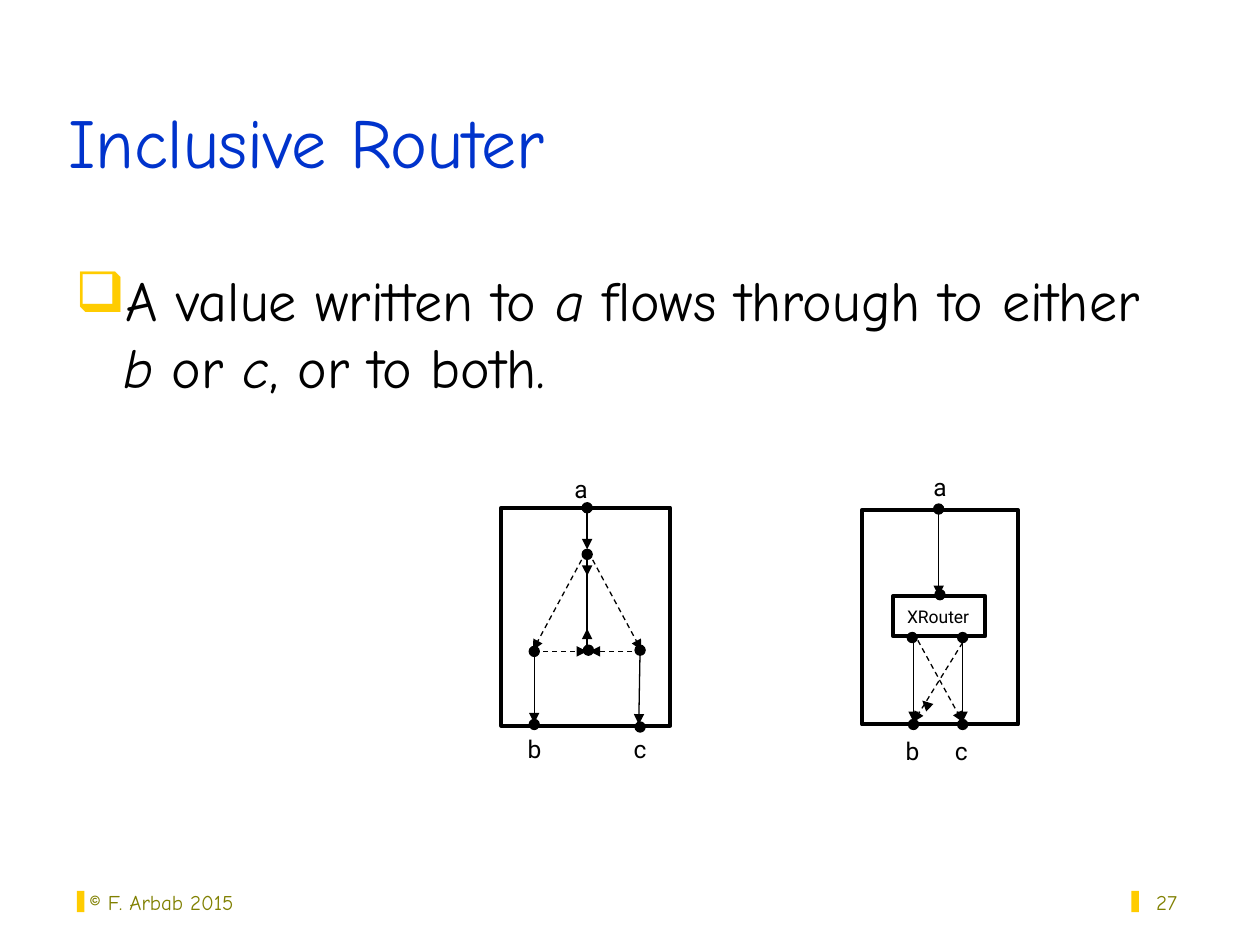
"""Builds the Inclusive Router slide on a grid of 100 columns by 75 rows."""
from lxml.etree import SubElement
from pptx import Presentation
from pptx.dml.color import RGBColor
from pptx.enum.dml import MSO_LINE
from pptx.enum.shapes import MSO_CONNECTOR, MSO_SHAPE
from pptx.enum.text import MSO_ANCHOR as Anchor, MSO_AUTO_SIZE as AutoSize, PP_ALIGN as Align
from pptx.oxml.ns import qn
from pptx.util import Inches, Pt

BLACK = RGBColor(0x00, 0x00, 0x00)
BLUE = RGBColor(0x00, 0x33, 0xCC)
GOLD = RGBColor(0xFF, 0xCC, 0x00)
OLIVE = RGBColor(0x80, 0x80, 0x00)
COLUMNS, ROWS = 100, 75
DOT = 0.8


class SlideBuilder:
    """Holds the style, the slide and the shape collection being drawn on."""

    body_font, label_font = "Comic Neue", "Roboto"

    def __init__(self, deck):
        self.deck = deck
        self.page = deck.slides.add_slide(deck.slide_layouts[5])
        self.shapes = self.page.shapes

    def place(self, column, row):
        return (round(self.deck.slide_width * column / COLUMNS),
                round(self.deck.slide_height * row / ROWS))

    def area(self, left, top, width, height):
        return self.place(left, top) + self.place(width, height)

    def start_group(self):
        self.shapes = self.page.shapes.add_group_shape().shapes

    def style(self, font, **values):
        font.color.rgb = values.pop("color")
        for key, value in values.items():
            setattr(font, key, value)

    def title(self, text, area):
        box = self.page.shapes.title
        for key, value in zip(("left", "top", "width", "height"), self.area(*area)):
            setattr(box, key, value)
        frame = box.text_frame
        frame.text = text
        frame.vertical_anchor, frame.auto_size = Anchor.BOTTOM, AutoSize.NONE
        para = frame.paragraphs[0]
        para.alignment = Align.LEFT
        self.style(para.runs[0].font, name=self.body_font, size=Pt(40), color=BLUE)

    def bullet(self, parts, area):
        frame = self.shapes.add_textbox(*self.area(*area)).text_frame
        frame.word_wrap = True
        para = frame.paragraphs[0]
        settings = para._p.get_or_add_pPr()
        settings.set("marL", str(Inches(0.38)))
        settings.set("indent", str(-Inches(0.38)))
        color = SubElement(settings, qn("a:buClr"))
        SubElement(color, qn("a:srgbClr")).set("val", str(GOLD))
        SubElement(settings, qn("a:buChar")).set("char", "❑")
        for text, italic in parts:
            span = para.add_run()
            span.text = text
            self.style(span.font, name=self.body_font, size=Pt(32),
                       italic=italic, color=BLACK)

    def footer(self, text, area, bar, alignment, indent):
        mark = self.shapes.add_shape(MSO_SHAPE.RECTANGLE, *self.area(*bar))
        mark.shadow.inherit = False
        mark.fill.solid()
        mark.fill.fore_color.rgb = GOLD
        mark.line.fill.background()
        frame = self.shapes.add_textbox(*self.area(*area)).text_frame
        frame.word_wrap, frame.vertical_anchor = True, Anchor.BOTTOM
        frame.margin_left = Inches(indent)
        para = frame.paragraphs[0]
        para.text, para.alignment = text, alignment
        self.style(para.runs[0].font, name=self.body_font, size=Pt(12), color=OLIVE)

    def label(self, text, area, size=14):
        frame = self.shapes.add_textbox(*self.area(*area)).text_frame
        frame.word_wrap, frame.auto_size = False, AutoSize.SHAPE_TO_FIT_TEXT
        para = frame.paragraphs[0]
        para.text, para.alignment = text, Align.CENTER
        self.style(para.runs[0].font, name=self.label_font, size=Pt(size), color=BLACK)

    def frame(self, *area):
        box = self.shapes.add_shape(MSO_SHAPE.RECTANGLE, *self.area(*area))
        box.shadow.inherit = False
        box.fill.background()
        box.line.color.rgb, box.line.width = BLACK, Pt(2.25)

    def dot(self, column, row):
        area = self.area(column - DOT / 2, row - DOT / 2, DOT, DOT)
        node = self.shapes.add_shape(MSO_SHAPE.OVAL, *area)
        node.shadow.inherit = False
        node.fill.solid()
        node.fill.fore_color.rgb = node.line.color.rgb = BLACK
        node.line.width = Pt(0.75)

    def channel(self, start, end, dashed=False, arrow=True):
        link = self.shapes.add_connector(
            MSO_CONNECTOR.STRAIGHT, *self.place(*start), *self.place(*end))
        link.line.color.rgb, link.line.width = BLACK, Pt(0.75)
        if dashed:
            link.line.dash_style = MSO_LINE.DASH
        if arrow:
            SubElement(link.line._get_or_add_ln(), qn("a:tailEnd")).set("type", "triangle")
        SubElement(link._element.spPr, qn("a:effectLst"))

    def circuit(self, frames, nodes, solid, dashed, labels):
        self.start_group()
        for area in frames:
            self.frame(*area)
        for node in nodes:
            self.dot(*node)
        for ends in solid:
            self.channel(*ends)
        for ends in dashed:
            self.channel(*ends, dashed=True)
        for text, left, top in labels:
            self.label(text, (left, top, 3, 3.3))


def main():
    deck = Presentation()
    deck.slide_width, deck.slide_height = Inches(10), Inches(7.5)
    slide = SlideBuilder(deck)
    slide.title("Inclusive Router", (4.4, 2.5, 85, 12.5))
    slide.bullet([("A value written to ", False), ("a", True),
                  (" flows through to either ", False), ("b", True),
                  (" or ", False), ("c", True), (", or to both.", False)],
                 (5, 20.6, 89.4, 45.6))
    slide.footer("© F. Arbab 2015", (4.7, 68.1, 20.8, 5),
                 (6.1, 70.7, 0.6, 1.7), Align.LEFT, 0.24)
    slide.footer("27", (73.6, 68.1, 20.8, 5),
                 (89.8, 70.7, 0.6, 1.7), Align.RIGHT, 0.1)

    top, fork, join = (46.6, 40.3), (46.6, 44), (46.7, 51.6)
    left, right = (42.4, 51.7), (50.8, 51.6)
    left_exit, right_exit = (42.4, 57.5), (50.8, 57.7)
    slide.circuit(
        frames=[(39.8, 40.3, 13.4, 17.3)],
        nodes=[top, fork, join, left, right, left_exit, right_exit],
        solid=[(top, (46.6, 43.6)), ((46.6, 44.1), (46.6, 45.7)),
               ((46.6, 51.5), (46.6, 49.9)), (left, (42.4, 57.4)),
               (right, (50.7, 57.5))],
        dashed=[((46.7, 43.8), (50.9, 51.6)), ((46.5, 43.8), (42.3, 51.6)),
                ((50.9, 51.7), (46.8, 51.7)), (left, (46.6, 51.7))],
        labels=[("a", 44.6, 37.1), ("b", 40.9, 57.8), ("c", 49.3, 57.8)])
    slide.channel((46.6, 45), (46.6, 50.5), arrow=False)

    entry, router = (74.5, 40.4), (74.6, 47.2)
    left_port, right_port = (72.4, 50.6), (76.4, 50.6)
    left_end, right_end = (72.5, 57.3), (76.4, 57.3)
    slide.circuit(
        frames=[(68.4, 40.5, 12.4, 17), (70.9, 47.3, 7.3, 3.2)],
        nodes=[entry, router, left_port, right_port, (72.5, 57.5), (76.4, 57.5)],
        solid=[(entry, (74.5, 47.3)), ((72.5, 50.2), left_end),
               ((76.4, 50.2), right_end), ((73.3, 55.7), (73.2, 55.6))],
        dashed=[((72.5, 50.2), right_end), ((76.4, 51), left_end)],
        labels=[("a", 73.1, 37), ("b", 70.9, 57.9), ("c", 74.8, 57.9)])
    slide.label("XRouter", (71, 47.6, 6.9, 2.7), size=10)
    deck.save("out.pptx")


if __name__ == "__main__":
    main()
